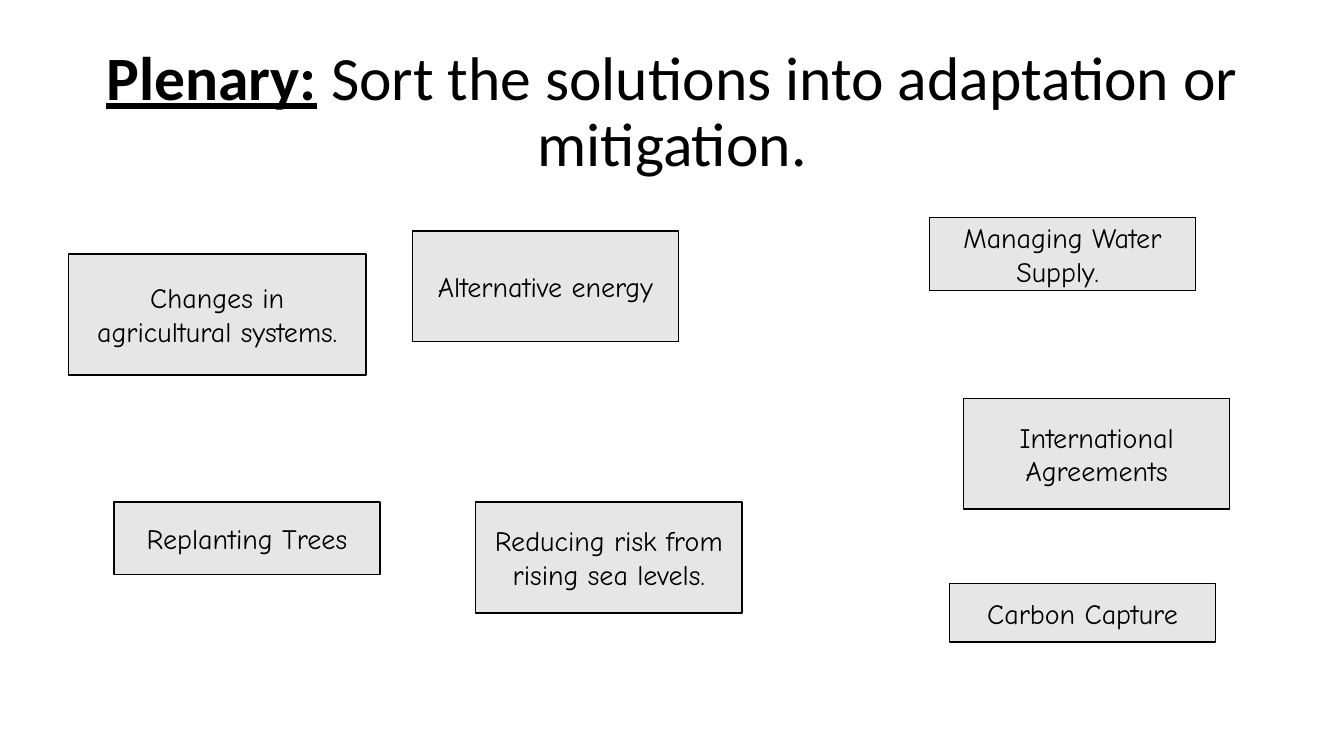
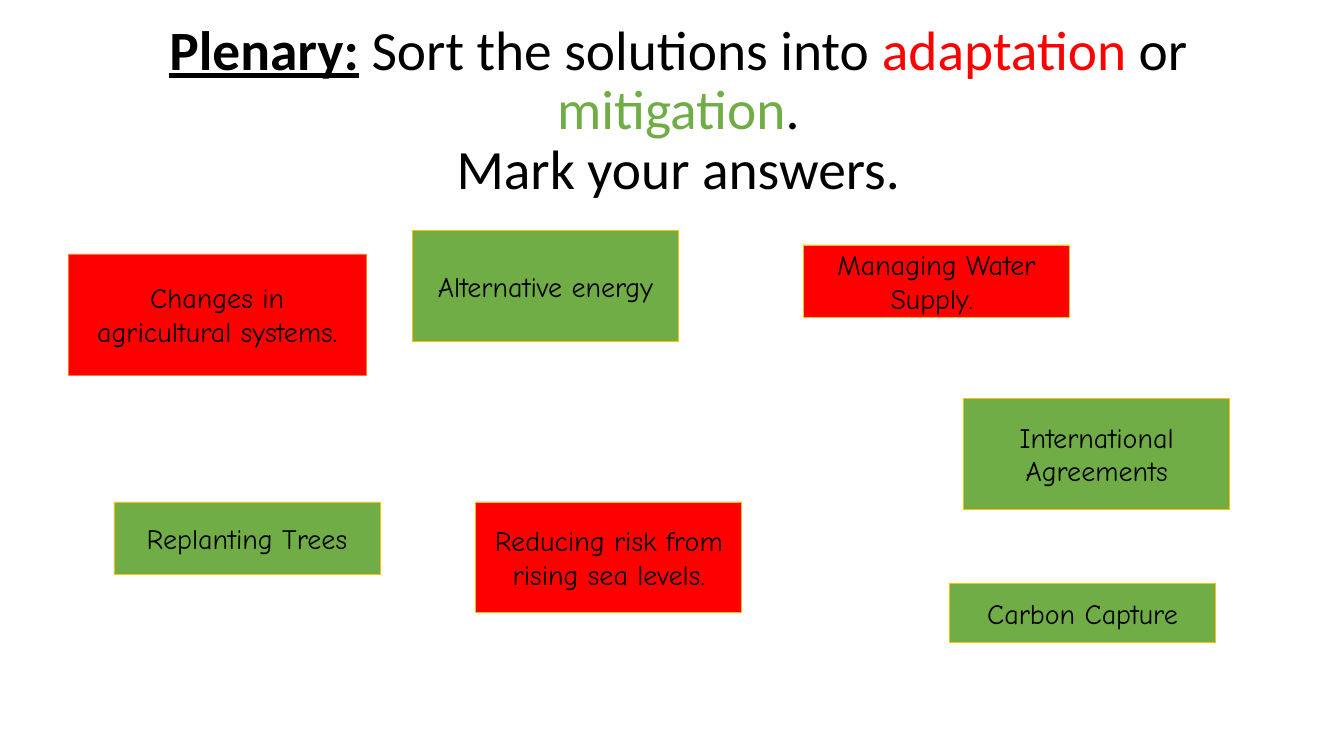
from pptx import Presentation, util as u
from pptx.dml.color import RGBColor
from pptx.enum import shapes, text

BLACK, GREY, RED, GREEN = "000000", "E7E6E6", "FF0000", "70AD47"
ORANGE, GOLD = "ED7D31", "FFC000"
WIDE, HIGH = u.Inches(13.333), u.Inches(7.5)
LEAD = ("Plenary:", BLACK, True)

# Cards: words, kind of solution, then box in percent of the slide
CARDS = [
    ("Changes in agricultural systems.", RED, (5.1, 33.6, 22.13, 16)),
    ("Managing Water Supply. ", RED, (69.15, 28.8, 19.8, 9.6)),
    ("Reducing risk from rising sea levels.", RED, (35.4, 66.4, 19.8, 14.67)),
    ("Alternative energy", GREEN, (30.68, 30.53, 19.8, 14.67)),
    ("Carbon Capture", GREEN, (70.65, 77.2, 19.8, 7.73)),
    ("Replanting Trees", GREEN, (8.48, 66.4, 19.8, 9.6)),
    ("International Agreements", GREEN, (71.7, 52.67, 19.8, 14.67)),
]
WATER = 1  # the card that moves on the answer slide


def color(code):
    return RGBColor.from_string(code)


def place(box):
    return [int(side * part / 100) for side, part in zip((WIDE, HIGH) * 2, box)]


def style(item, **look):
    for key, value in look.items():
        setattr(item, key, value)


def write(para, words, code, **look):
    run = para.add_run()
    run.text = words
    style(run.font, **look)
    run.font.color.rgb = color(code)


def frame(shape):
    style(shape.text_frame, word_wrap=True,
          vertical_anchor=text.MSO_ANCHOR.MIDDLE)
    para = shape.text_frame.paragraphs[0]
    para.alignment = text.PP_ALIGN.CENTER
    return para


def title(slide, box, size, lines):
    """Centred heading; each line is a list of (words, colour, strong)."""
    para = frame(slide.shapes.add_textbox(*place(box)))
    para.line_spacing = 0.9
    for row, parts in enumerate(lines):
        if row:
            para.add_line_break()
        for words, code, strong in parts:
            write(para, words, code, name="Calibri", size=u.Pt(size),
                  bold=strong, underline=strong)


def card(slide, box, words, fill, edge, width):
    shape = slide.shapes.add_shape(shapes.MSO_SHAPE.RECTANGLE, *place(box))
    shape.shadow.inherit = False
    shape.fill.solid()
    shape.fill.fore_color.rgb = color(fill)
    shape.line.color.rgb = color(edge)
    shape.line.width = u.Pt(width)
    write(frame(shape), words, BLACK, name="Comic Neue", size=u.Pt(20))


def task(slide):
    title(slide, (6.9, 5.33, 86.25, 19.33), 44, [
        [LEAD, (" Sort the solutions into adaptation or mitigation.", BLACK, False)]])
    for words, _, box in CARDS:
        card(slide, box, words, GREY, BLACK, 1)


def answers(slide):
    title(slide, (7.35, 2.13, 86.25, 25.33), 39.6, [
        [LEAD, (" Sort the solutions into ", BLACK, False),
         ("adaptation", RED, False), (" or ", BLACK, False),
         ("mitigation", GREEN, False), (".", BLACK, False)],
        [("Mark your answers.", BLACK, False)]])
    for spot, (words, kind, box) in enumerate(CARDS):
        if spot == WATER:
            box = (59.78, 32.4) + box[2:]
        card(slide, box, words, kind, GOLD if spot else ORANGE, 0.5)


def main():
    deck = Presentation()
    style(deck, slide_width=WIDE, slide_height=HIGH)
    for build in (task, answers):
        build(deck.slides.add_slide(deck.slide_layouts[6]))
    deck.save("out.pptx")


if __name__ == "__main__":
    main()
